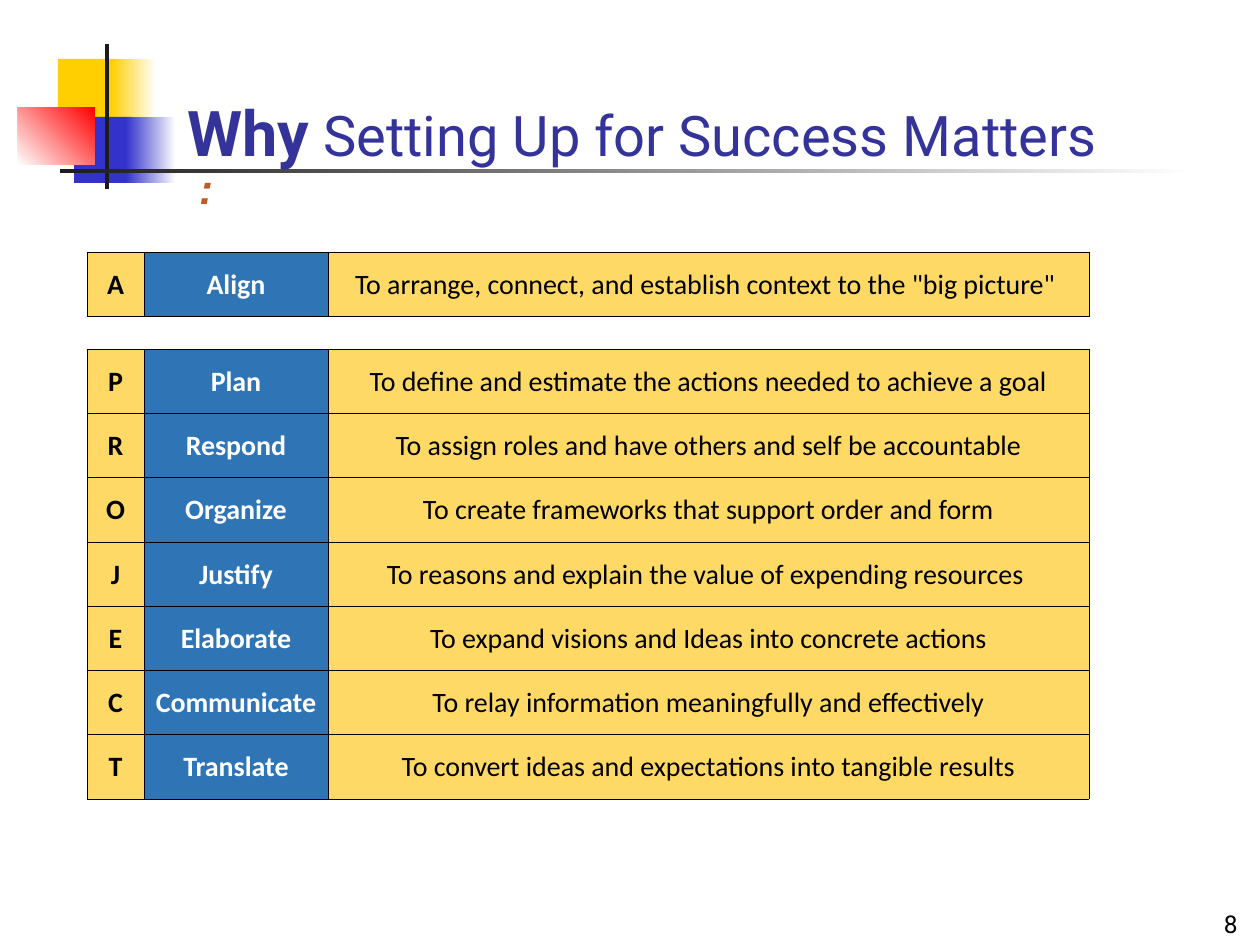
import pptx
import pptx.dml.color
import pptx.enum.shapes
import pptx.enum.text
import pptx.oxml
import pptx.oxml.ns
import pptx.util
from lxml import etree

RGBColor = pptx.dml.color.RGBColor
ANCHOR = pptx.enum.text.MSO_ANCHOR
ALIGN = pptx.enum.text.PP_ALIGN

EMU_PER_PX = 914400 / 126

WHITE = RGBColor(0xFF, 0xFF, 0xFF)
BLACK = RGBColor(0x00, 0x00, 0x00)
CHARCOAL = RGBColor(0x1C, 0x1C, 0x1C)
YELLOW = RGBColor(0xFF, 0xCF, 0x01)
INDIGO = RGBColor(0x33, 0x33, 0xCC)
RED = RGBColor(0xFF, 0x00, 0x00)
TITLE_BLUE = RGBColor(0x33, 0x33, 0x99)
RUST = RGBColor(0xC1, 0x5B, 0x23)
GOLD = RGBColor(0xFF, 0xD9, 0x66)
STEEL = RGBColor(0x2F, 0x75, 0xB5)

# left, top, width, height, colours (two make a gradient), gradient angle
DECORATION = [
    (58, 59, 60, 66, [YELLOW], 0),
    (111, 59, 45, 66, [YELLOW, WHITE], 0),
    (74, 117, 58, 66, [INDIGO], 0),
    (126, 117, 50, 66, [INDIGO, WHITE], 0),
    (18, 107, 77, 58, [WHITE, RED], 45),
    (105, 44, 4, 145, [CHARCOAL], 0),
    (60, 169, 1134, 4, [CHARCOAL, WHITE], 0),
]

# None is the gap between the two groups
STEPS = [
    ("A", "Align", 'To arrange, connect, and establish context to the "big picture" '),
    None,
    ("P", "Plan", "To define and estimate the actions needed to achieve a goal"),
    ("R", "Respond", "To assign roles and have others and self be accountable"),
    ("O", "Organize", "To create frameworks that support order and form"),
    ("J", "Justify", "To reasons and explain the value of expending resources "),
    ("E", "Elaborate", "To expand visions and Ideas into concrete actions"),
    ("C", "Communicate", "To relay information meaningfully and effectively"),
    ("T", "Translate", "To convert ideas and expectations into tangible results"),
]
COLUMN_WIDTHS = [57, 184, 761]
COLUMN_STYLES = [(GOLD, BLACK, True), (STEEL, WHITE, True), (GOLD, BLACK, False)]
TABLE_HEIGHT = 547
GAP_HEIGHT = 33


def px(length):
    return pptx.util.Emu(round(length * EMU_PER_PX))


def add_text(paragraph, text, font="Roboto", size=14, color=BLACK, bold=False, italic=False):
    run = paragraph.add_run()
    run.text = text
    run.font.name = font
    run.font.size = pptx.util.Pt(size)
    run.font.color.rgb = color
    run.font.bold = bold
    run.font.italic = italic


def add_rectangle(slide, left, top, width, height, colors, angle):
    shape = slide.shapes.add_shape(
        pptx.enum.shapes.MSO_SHAPE.RECTANGLE, px(left), px(top), px(width), px(height))
    shape.shadow.inherit = False
    shape.line.fill.background()
    if len(colors) == 1:
        shape.fill.solid()
        shape.fill.fore_color.rgb = colors[0]
        return
    shape.fill.gradient()
    shape.fill.gradient_angle = angle
    for stop, color in zip(shape.fill.gradient_stops, colors):
        stop.color.rgb = color


def add_text_box(slide, left, top, width, height):
    """Add a wrapping, bottom-anchored box and return its first paragraph."""
    frame = slide.shapes.add_textbox(px(left), px(top), px(width), px(height)).text_frame
    frame.word_wrap = True
    frame.vertical_anchor = ANCHOR.BOTTOM
    return frame.paragraphs[0]


def add_title(slide):
    paragraph = add_text_box(slide, 175, 40, 977, 179)
    paragraph.line_spacing = 0.86
    add_text(paragraph, "Why", size=36, color=TITLE_BLUE, bold=True)
    add_text(paragraph, " Setting Up for Success Matters ", size=32, color=TITLE_BLUE)
    paragraph.add_line_break()
    add_text(paragraph, " :", font="Arial", size=24, color=RUST, bold=True, italic=True)


def set_borders(cell, visible_sides):
    """Draw thin black lines on the given sides; call before setting the fill."""
    properties = cell._tc.get_or_add_tcPr()
    for side in "LRTB":
        line = etree.SubElement(
            properties, pptx.oxml.ns.qn(f"a:ln{side}"), w=str(pptx.util.Pt(0.5)))
        if side in visible_sides:
            fill = etree.SubElement(line, pptx.oxml.ns.qn("a:solidFill"))
            etree.SubElement(fill, pptx.oxml.ns.qn("a:srgbClr"), val=str(BLACK))
        else:
            etree.SubElement(line, pptx.oxml.ns.qn("a:noFill"))


def format_cell(cell):
    cell.vertical_anchor = ANCHOR.MIDDLE
    cell.margin_left = cell.margin_right = cell.margin_top = px(1)
    cell.margin_bottom = 0


def fill_step_cell(cell, text, fill, color, bold):
    set_borders(cell, "LRTB")
    cell.fill.solid()
    cell.fill.fore_color.rgb = fill
    paragraph = cell.text_frame.paragraphs[0]
    paragraph.alignment = ALIGN.CENTER
    add_text(paragraph, text, font="Calibri", size=16, color=color, bold=bold)


def clear_gap_cell(cell):
    set_borders(cell, "TB")
    cell.fill.background()
    # A small end mark keeps the empty row from growing
    end_mark = cell.text_frame.paragraphs[0]._p.get_or_add_endParaRPr()
    end_mark.set("sz", "800")


def add_steps_table(slide):
    table = slide.shapes.add_table(
        len(STEPS), len(COLUMN_WIDTHS),
        px(87), px(252), px(sum(COLUMN_WIDTHS)), px(TABLE_HEIGHT)).table
    table.first_row = False
    table.horz_banding = False
    for column, width in zip(table.columns, COLUMN_WIDTHS):
        column.width = px(width)
    step_height = px((TABLE_HEIGHT - GAP_HEIGHT) / (len(STEPS) - 1))
    for row, step in zip(table.rows, STEPS):
        row.height = step_height if step else px(GAP_HEIGHT)
        for index, cell in enumerate(row.cells):
            format_cell(cell)
            if step:
                fill_step_cell(cell, step[index], *COLUMN_STYLES[index])
            else:
                clear_gap_cell(cell)


def add_page_number(slide):
    paragraph = add_text_box(slide, 925, 903, 325, 42)
    paragraph.alignment = ALIGN.RIGHT
    add_text(paragraph, "8")


def main():
    presentation = pptx.Presentation()
    presentation.slide_width = px(1260)
    presentation.slide_height = px(945)
    slide = presentation.slides.add_slide(presentation.slide_layouts[6])
    for rectangle in DECORATION:
        add_rectangle(slide, *rectangle)
    add_page_number(slide)
    add_steps_table(slide)
    add_title(slide)
    presentation.save("out.pptx")


if __name__ == "__main__":
    main()
